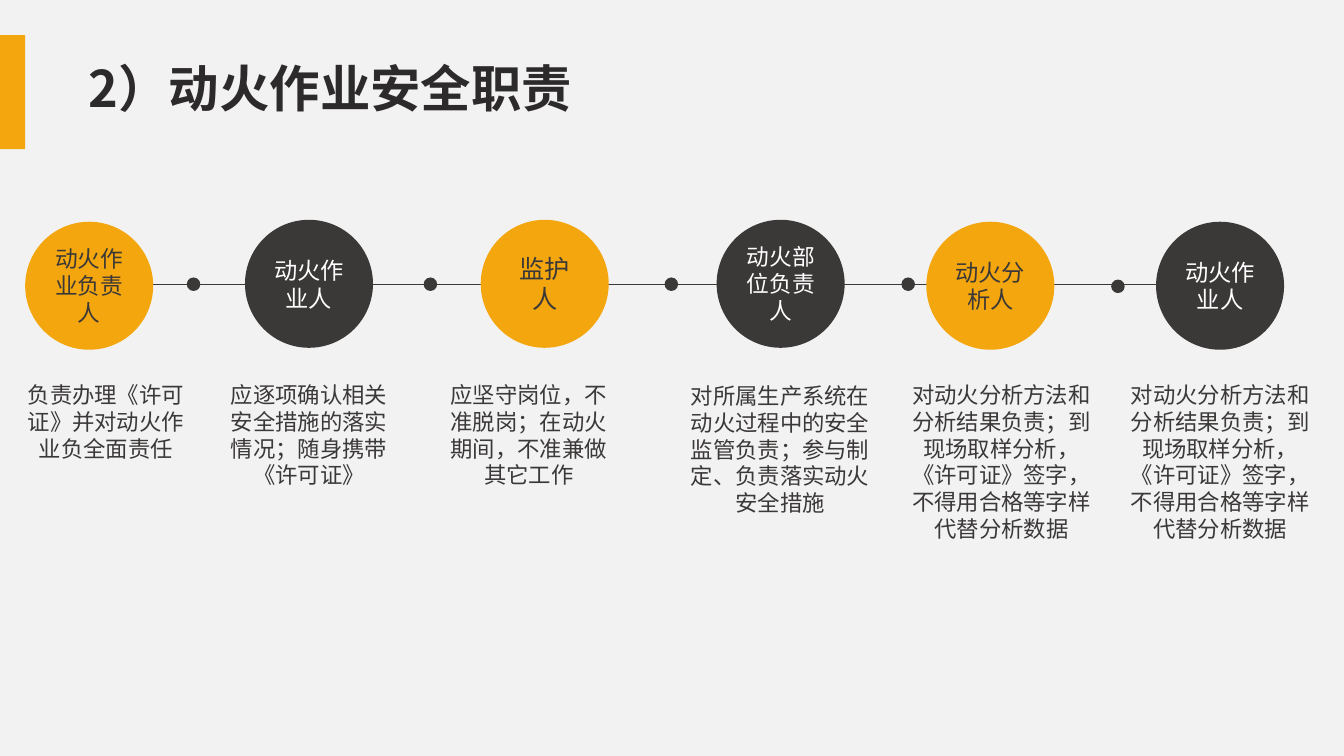
from lxml import etree
from pptx import Presentation
from pptx.dml.color import RGBColor
from pptx.enum.shapes import MSO_CONNECTOR, MSO_SHAPE
from pptx.enum.text import MSO_ANCHOR, MSO_AUTO_SIZE, PP_ALIGN
from pptx.oxml.ns import qn
from pptx.util import Pt

ORANGE = RGBColor(0xF3, 0xA6, 0x0D)
DARK = RGBColor(0x3B, 0x38, 0x38)
TITLE_INK = RGBColor(0x2C, 0x2A, 0x2A)
WHITE = RGBColor(0xFF, 0xFF, 0xFF)
PAPER = RGBColor(0xF2, 0xF2, 0xF2)
CHINESE_FONT = "Noto Sans CJK SC"

TITLE = "2）动火作业安全职责"
ANALYST_DUTY = "对动火分析方法和分析结果负责；到现场取样分析，《许可证》签字，不得用合格等字样代替分析数据"
# role, text size, circle left, circle top, duty, duty left, duty top, duty width
ROLES = [
    ("动火作业负责人", 16.2, 18, 158.4,
     "负责办理《许可证》并对动火作业负全面责任", 9.4, 268.6, 132.5),
    ("动火作业人", 16.6, 175, 157,
     "应逐项确认相关安全措施的落实情况；随身携带《许可证》", 154.1, 268.6, 133.2),
    ("监护人", 18, 343.4, 157,
     "应坚守岗位，不准脱岗；在动火期间，不准兼做其它工作", 311.8, 268.6, 131.8),
    ("动火部位负责人", 16.2, 511.9, 157,
     "对所属生产系统在动火过程中的安全监管负责；参与制定、负责落实动火安全措施",
     485.3, 269.3, 144),
    ("动火分析人", 16.6, 661.7, 158.4, ANALYST_DUTY, 636.5, 268.6, 157.7),
    ("动火作业人", 16.6, 825.8, 158.4, ANALYST_DUTY, 794.2, 268.6, 154.8),
]
DOTS = [(133.9, 198.7), (303.1, 198.7), (475.2, 198.7), (644.4, 198.7), (794.2, 200.2)]
CIRCLE_SIZE = 91.44
DOT_SIZE = 8.64
DUTY_HEIGHT = 176.4
LINE_Y = 203


def write(shape, text, size, color, font=CHINESE_FONT, bold=False,
          align=PP_ALIGN.CENTER, anchor=MSO_ANCHOR.TOP, spacing=None):
    frame = shape.text_frame
    frame.word_wrap = True
    frame.auto_size = MSO_AUTO_SIZE.NONE
    frame.vertical_anchor = anchor
    paragraph = frame.paragraphs[0]
    paragraph.alignment = align
    paragraph.line_spacing = spacing or Pt(round(size * 1.2, 1))
    run = paragraph.add_run()
    run.text = text
    run.font.size = Pt(size)
    run.font.bold = bold
    run.font.name = font
    run.font.color.rgb = color
    east_asian = etree.Element(qn("a:ea"), typeface=CHINESE_FONT)
    run.font._element.find(qn("a:latin")).addnext(east_asian)


def add_filled(slide, preset, left, top, width, height, color):
    shape = slide.shapes.add_shape(preset, Pt(left), Pt(top), Pt(width), Pt(height))
    shape.shadow.inherit = False
    shape.fill.solid()
    shape.fill.fore_color.rgb = color
    shape.line.fill.background()
    return shape


def add_title(slide):
    title = slide.shapes.title
    title.left, title.top, title.width, title.height = Pt(56.2), Pt(28.8), Pt(630), Pt(73.4)
    write(title, TITLE, 36, TITLE_INK, bold=True, align=PP_ALIGN.LEFT,
          anchor=MSO_ANCHOR.MIDDLE, spacing=0.9)
    add_filled(slide, MSO_SHAPE.RECTANGLE, -0.7, 25.2, 18.7, 81.4, ORANGE)


def add_timeline(slide):
    line = slide.shapes.add_connector(
        MSO_CONNECTOR.STRAIGHT, Pt(20), Pt(LINE_Y), Pt(917.3), Pt(LINE_Y))
    line.line.color.rgb = DARK
    line.line.width = Pt(0.5)
    etree.SubElement(line._element.spPr, qn("a:effectLst"))
    for left, top in DOTS:
        dot = add_filled(slide, MSO_SHAPE.OVAL, left, top, DOT_SIZE, DOT_SIZE, DARK)
        dot.line.color.rgb = DARK
        dot.line.width = Pt(1)


def add_roles(slide):
    for index, (role, size, left, top, duty, duty_left, duty_top, duty_width) in enumerate(ROLES):
        fill, ink = (DARK, WHITE) if index % 2 else (ORANGE, DARK)
        circle = add_filled(slide, MSO_SHAPE.OVAL, left, top, CIRCLE_SIZE, CIRCLE_SIZE, fill)
        write(circle, role, size, ink, font="Arial", anchor=MSO_ANCHOR.MIDDLE)
        box = slide.shapes.add_textbox(
            Pt(duty_left), Pt(duty_top), Pt(duty_width), Pt(DUTY_HEIGHT))
        write(box, duty, 16, DARK)


def main():
    presentation = Presentation()
    presentation.slide_width, presentation.slide_height = Pt(960), Pt(540)
    slide = presentation.slides.add_slide(presentation.slide_layouts[5])
    slide.background.fill.solid()
    slide.background.fill.fore_color.rgb = PAPER
    add_title(slide)
    add_timeline(slide)
    add_roles(slide)
    presentation.save("out.pptx")


if __name__ == "__main__":
    main()
